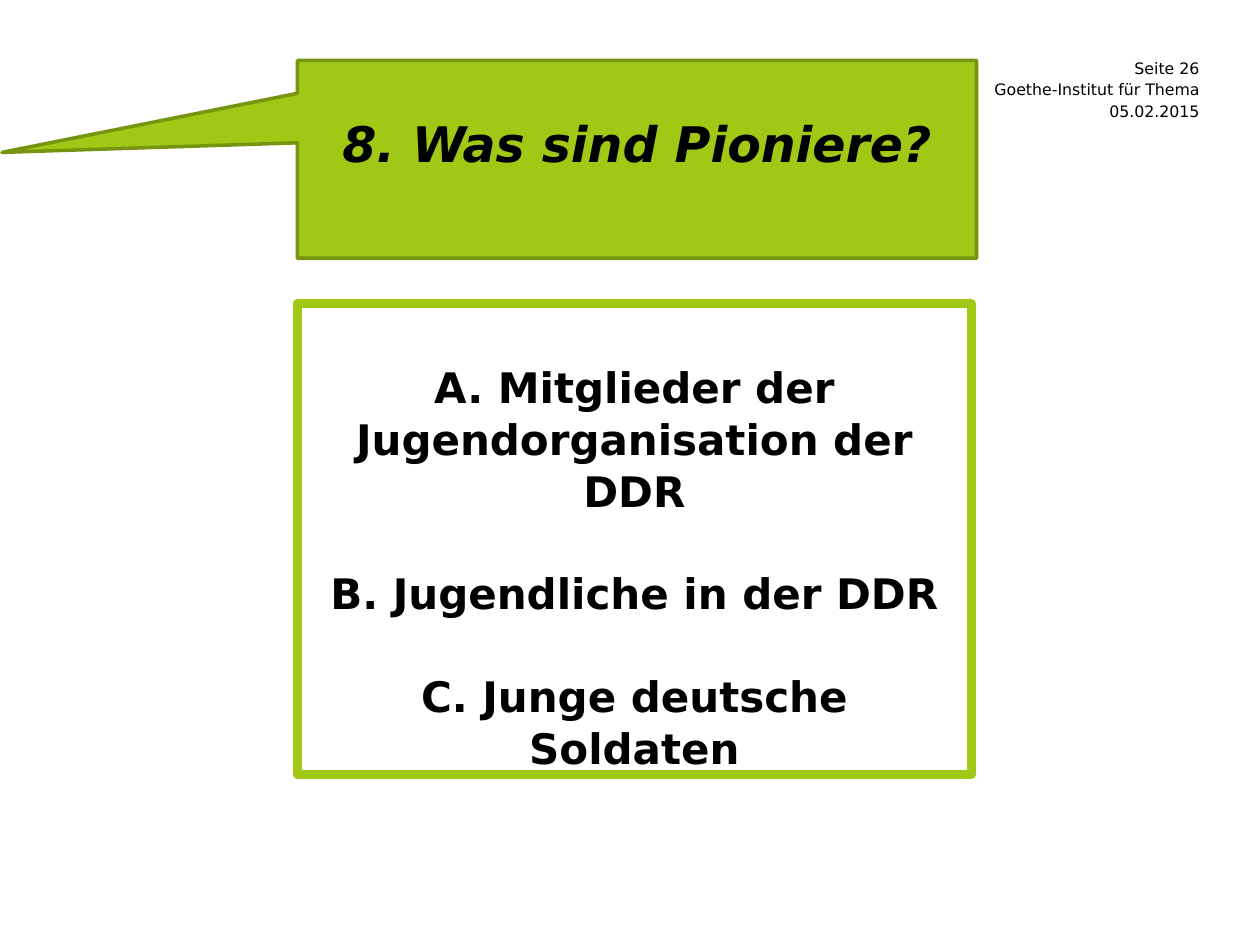
from dataclasses import dataclass
from typing import Any

from pptx import Presentation
from pptx.dml.color import RGBColor
from pptx.enum.shapes import MSO_SHAPE as Shape
from pptx.enum.text import MSO_ANCHOR as Anchor, PP_ALIGN as Align
from pptx.util import Inches, Pt

CELL = 0.1


def cells(count):
    """Turn a count of grid cells into a length."""
    return Inches(count * CELL)


def color(value):
    """Turn a hex string into a colour."""
    return RGBColor.from_string(value)


def assign(target, values):
    """Set each attribute named in a dict of format values."""
    for name, value in values.items():
        setattr(target, name, value)


@dataclass
class QuizPage:
    """Holds the style and the current slide."""

    page: Any
    font: str = "DejaVu Sans"
    ink: str = "000000"
    green: str = "A0C814"
    edge: str = "76940F"

    def fill_text(self, box, lines, frame, para_format, span_format, gap=0):
        """Set one paragraph per line, with a gap between them."""
        paras = box.text_frame
        assign(paras, frame)
        for index, line in enumerate(lines):
            para = paras.add_paragraph() if index else paras.paragraphs[0]
            assign(para, para_format)
            if index and gap:
                para.space_before = Pt(gap)
            span = para.add_run()
            span.text = line
            assign(span.font, {"name": self.font, **span_format})
            span.font.color.rgb = color(self.ink)

    def label(self, place, text):
        """Add a small right-aligned line of page information."""
        box = self.page.shapes.add_textbox(*map(cells, place))
        frame = {"word_wrap": False, "vertical_anchor": Anchor.MIDDLE,
                 "margin_left": 0, "margin_right": 0, "margin_top": 0, "margin_bottom": 0}
        self.fill_text(box, [text], frame, {"alignment": Align.RIGHT}, {"size": Pt(9)})

    def panel(self, kind, place, line, width, fill=None):
        """Add an outlined shape, filled if a colour is given."""
        box = self.page.shapes.add_shape(kind, *map(cells, place))
        box.shadow.inherit = False
        if fill:
            box.fill.solid()
            box.fill.fore_color.rgb = color(fill)
        else:
            box.fill.background()
        box.line.color.rgb = color(line)
        box.line.width = Pt(width)
        return box

    def question(self, place, tip, text):
        """Add the speech callout with the question."""
        box = self.panel(Shape.RECTANGULAR_CALLOUT, place, self.edge, 2, self.green)
        for index, share in enumerate(tip):
            box.adjustments[index] = share
        frame = {"word_wrap": True, "vertical_anchor": Anchor.MIDDLE, "margin_bottom": cells(3.1)}
        self.fill_text(box, [text], frame, {"alignment": Align.CENTER},
                       {"size": Pt(28), "bold": True, "italic": True})

    def answers(self, place, lines):
        """Add the framed list of possible answers."""
        box = self.panel(Shape.RECTANGLE, place, self.green, 5)
        frame = {"word_wrap": True, "vertical_anchor": Anchor.TOP, "margin_top": cells(4.5)}
        self.fill_text(box, lines, frame, {"alignment": Align.CENTER, "line_spacing": 1.03},
                       {"size": Pt(24), "bold": True}, gap=28.8)


def main():
    """Build the quiz slide and save it."""
    deck = Presentation()
    assign(deck, {"slide_width": cells(100), "slide_height": cells(75)})
    quiz = QuizPage(deck.slides.add_slide(deck.slide_layouts[6]))
    for row, text in enumerate(["Seite 26", "Goethe-Institut für Thema", "05.02.2015"]):
        quiz.label((73.2, 4.6 + 1.7 * row, 22, 1.6), text)
    quiz.question((23.6, 4.8, 53.9, 15.7), (-0.935, -0.035), "8. Was sind Pioniere?")
    quiz.answers((23.6, 24.1, 53.5, 37.4), [
        "A. Mitglieder der Jugendorganisation der DDR",
        "B. Jugendliche in der DDR",
        "C. Junge deutsche Soldaten",
    ])
    deck.save("out.pptx")


if __name__ == "__main__":
    main()
